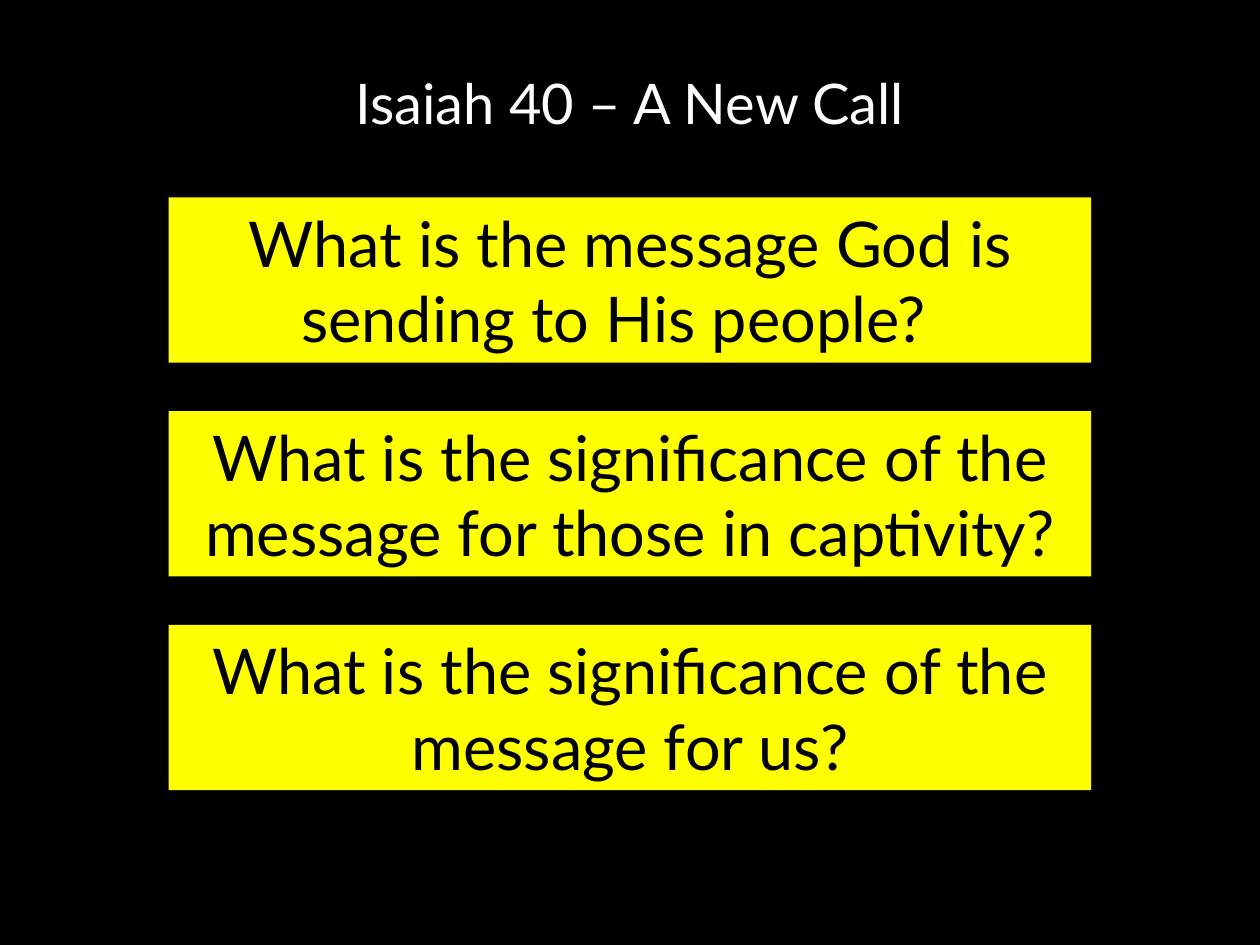
from dataclasses import dataclass

from pptx import Presentation
from pptx.dml.color import RGBColor
from pptx.enum.shapes import MSO_SHAPE
from pptx.enum.text import MSO_ANCHOR, MSO_AUTO_SIZE, PP_ALIGN
from pptx.slide import Slide
from pptx.text.text import TextFrame
from pptx.util import Cm, Pt

RECT = MSO_SHAPE.RECTANGLE
TOP = MSO_ANCHOR.TOP
MIDDLE = MSO_ANCHOR.MIDDLE
GROW = MSO_AUTO_SIZE.SHAPE_TO_FIT_TEXT
FIXED = MSO_AUTO_SIZE.NONE
CENTER = PP_ALIGN.CENTER

BLACK = RGBColor(0, 0, 0)
WHITE = RGBColor(255, 255, 255)
YELLOW = RGBColor(255, 255, 0)
FONT = "Lato"

LEFT, WIDTH, HEIGHT = 3.4, 18.6, 3.33
FIRST, STEP = 3.98, 4.31


@dataclass
class Panel:
    text: str
    top: float


QUESTIONS = [
    "What is the message God is sending to His people?  ",
    "What is the significance of the message for those in captivity?",
    "What is the significance of the message for us?",
]
PANELS = [Panel(text, FIRST + row * STEP) for row, text in enumerate(QUESTIONS)]


def write(frame: TextFrame, text: str, *, size: int, color: RGBColor,
          anchor=MIDDLE, fit=FIXED, spacing: float = 1.0) -> None:
    frame.word_wrap = True
    frame.auto_size = fit
    frame.vertical_anchor = anchor
    para = frame.paragraphs[0]
    para.alignment = CENTER
    para.line_spacing = spacing
    run = para.add_run()
    run.text = text
    run.font.name = FONT
    run.font.size = Pt(size)
    run.font.color.rgb = color


def draw_title(slide: Slide, text: str) -> None:
    title = slide.shapes.title
    title.left, title.top = Cm(1.75), Cm(1.4)
    title.width, title.height = Cm(21.9), Cm(1.7)
    write(title.text_frame, text, size=32, color=WHITE, anchor=TOP, spacing=0.9)


def draw_panel(slide: Slide, panel: Panel) -> None:
    box = slide.shapes.add_shape(
        RECT, Cm(LEFT), Cm(panel.top), Cm(WIDTH), Cm(HEIGHT))
    box.shadow.inherit = False
    box.fill.solid()
    box.fill.fore_color.rgb = YELLOW
    box.line.fill.background()
    write(box.text_frame, panel.text, size=36, color=BLACK, fit=GROW)


def main() -> None:
    deck = Presentation()
    deck.slide_width, deck.slide_height = Cm(25.4), Cm(19.05)
    slide = deck.slides.add_slide(deck.slide_layouts.get_by_name("Title Only"))
    slide.background.fill.solid()
    slide.background.fill.fore_color.rgb = BLACK
    draw_title(slide, "Isaiah 40 – A New Call")
    for panel in PANELS:
        draw_panel(slide, panel)
    deck.save("out.pptx")


if __name__ == "__main__":
    main()
